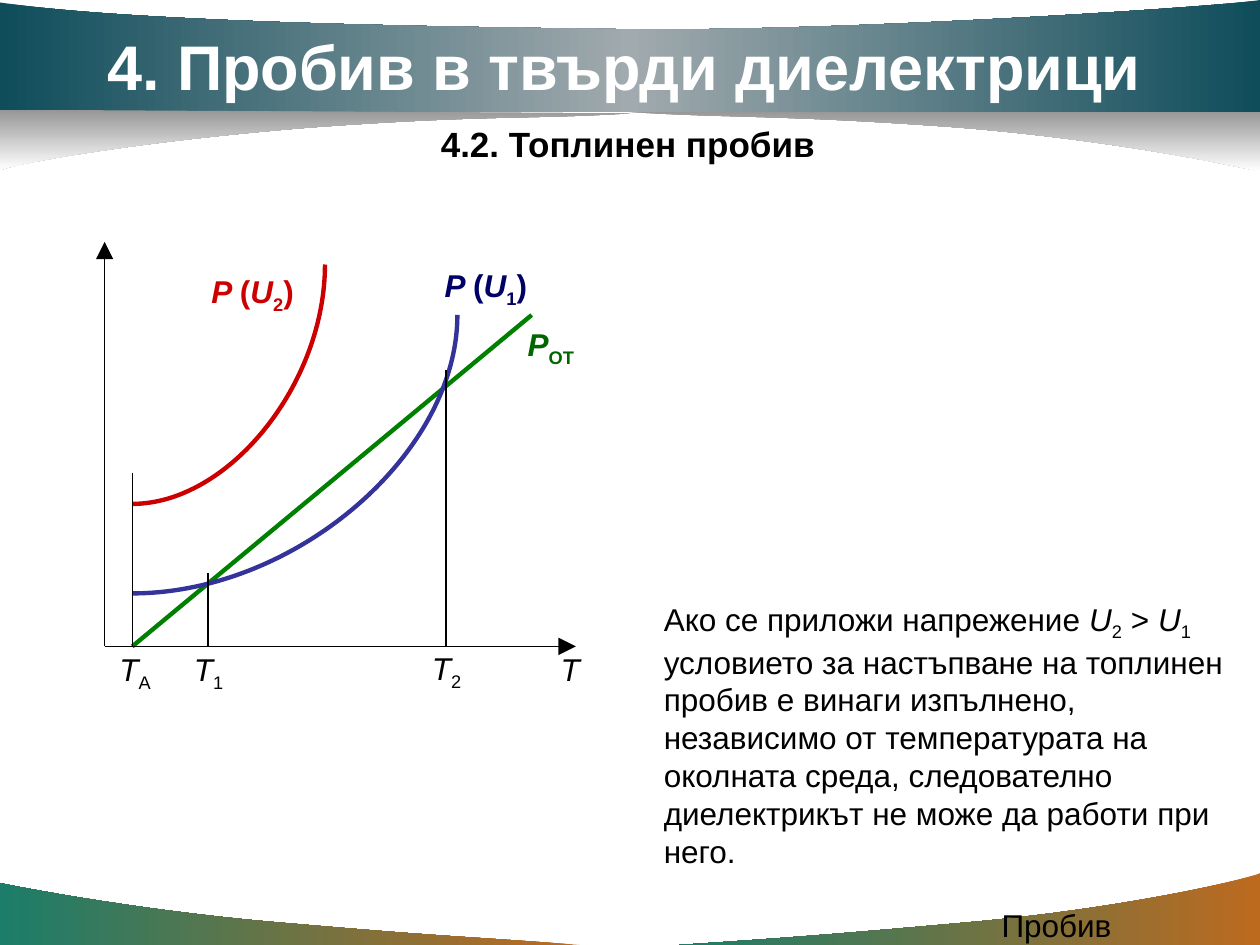
from dataclasses import dataclass

from lxml.etree import SubElement
from pptx import Presentation
from pptx.dml.color import RGBColor
from pptx.enum.shapes import MSO_CONNECTOR
from pptx.enum.text import MSO_ANCHOR, MSO_AUTO_SIZE, PP_ALIGN
from pptx.oxml.ns import qn
from pptx.util import Inches, Pt


@dataclass(frozen=True)
class Theme:
    font: str = "Arial"
    title_size: int = 36
    subtitle_size: int = 20
    text_size: int = 18
    thin: float = 0.75
    thick: float = 2.5
    black: str = "000000"
    white: str = "FFFFFF"
    green: str = "008000"
    dark_green: str = "006600"
    red: str = "CC0000"
    blue: str = "333399"
    dark_blue: str = "000066"
    floor_colors: tuple = ("BD6A1F", "1B7D6A")
    shade_colors: tuple = ("969696", "FFFFFF")
    header_colors: tuple = ("0F4D5B", "A1AAAE", "0F4D5B")


THEME = Theme()
LEFTWARD, DOWNWARD = 180, 90
UNITS_PER_INCH = 1000


@dataclass(frozen=True)
class Band:
    """A start point, then lines (x, y) and Bezier curves (x1, y1, x2, y2, x, y)."""
    colors: tuple
    angle: int
    start: tuple
    segments: tuple


@dataclass(frozen=True)
class Stroke:
    begin: tuple
    end: tuple
    color: str = THEME.black
    width: float = THEME.thin
    curved: bool = False
    arrow: bool = False


@dataclass(frozen=True)
class Label:
    """Spans are (text, style) pairs; style is "", "italic" or "sub"."""
    place: tuple
    spans: tuple
    color: str = THEME.black
    size: int = THEME.text_size
    bold: bool = False
    wrap: bool = False


def bend_segments(shape, segments: tuple) -> None:
    """Join each three line steps that stand for a curve into one Bezier step."""
    steps = iter(shape._element.findall(".//" + qn("a:lnTo")))
    for segment in segments:
        step = next(steps)
        if len(segment) == 6:
            curve = step.makeelement(qn("a:cubicBezTo"))
            step.addprevious(curve)
            for part in (step, next(steps), next(steps)):
                curve.append(part[0])
                part.getparent().remove(part)


def draw_band(page, band: Band) -> None:
    builder = page.shapes.build_freeform(*(value * UNITS_PER_INCH for value in band.start),
                                         scale=Inches(1) / UNITS_PER_INCH)
    points = [(segment[i] * UNITS_PER_INCH, segment[i + 1] * UNITS_PER_INCH)
              for segment in band.segments for i in range(0, len(segment), 2)]
    builder.add_line_segments(points, close=True)
    shape = builder.convert_to_shape()
    bend_segments(shape, band.segments)
    shape.shadow.inherit = False
    shape.line.fill.background()
    shape.fill.gradient()
    shape.fill.gradient_angle = 360 - band.angle
    stops = shape._element.spPr.find(".//" + qn("a:gsLst"))
    stops.clear()
    for index, color in enumerate(band.colors):
        position = 100000 * index // (len(band.colors) - 1)
        stop = SubElement(stops, qn("a:gs"), pos=str(position))
        SubElement(stop, qn("a:srgbClr"), val=color)


def draw_stroke(page, stroke: Stroke) -> None:
    kind = MSO_CONNECTOR.CURVE if stroke.curved else MSO_CONNECTOR.STRAIGHT
    ends = (Inches(value) for value in stroke.begin + stroke.end)
    connector = page.shapes.add_connector(kind, *ends)
    connector.line.color.rgb = RGBColor.from_string(stroke.color)
    connector.line.width = Pt(stroke.width)
    properties = connector._element.spPr
    if stroke.curved:  # a quarter turn, leaving horizontally
        properties.find(qn("a:prstGeom")).set("prst", "curvedConnector2")
    if stroke.arrow:
        SubElement(connector.line._get_or_add_ln(), qn("a:tailEnd"),
                   type="triangle", w="lg", len="lg")
    SubElement(properties, qn("a:effectLst"))


def fill_text(box, label: Label) -> None:
    box.left, box.top, box.width, box.height = (Inches(v) for v in label.place)
    frame = box.text_frame
    frame.auto_size = MSO_AUTO_SIZE.NONE
    frame.word_wrap = label.wrap
    frame.vertical_anchor = MSO_ANCHOR.TOP
    para = frame.paragraphs[0]
    para.alignment = PP_ALIGN.LEFT
    para.font.name = THEME.font
    para.font.size = Pt(label.size)
    para.font.bold = label.bold
    para.font.color.rgb = RGBColor.from_string(label.color)
    for text, style in label.spans:
        span = para.add_run()
        span.text = text
        if style == "italic":
            span.font.italic = True
        elif style == "sub":
            span.font._element.set("baseline", "-25000")


def draw_label(page, label: Label) -> None:
    fill_text(page.shapes.add_textbox(0, 0, 0, 0), label)


def power_spans(index: str) -> tuple:
    return (("P ", "italic"), ("(", ""), ("U", "italic"), (index, "sub"), (")", ""))


def temperature_spans(index: str) -> tuple:
    return ("T", "italic"), (index, "sub")


BANDS = (
    Band(THEME.floor_colors, LEFTWARD, (4.6, 7.5),
         ((3.84, 7.44, 3.58, 7.44, 2.32, 7.33), (1.06, 7.23, 0.01, 7.01, 0, 7.01), (0, 7.5))),
    Band(THEME.floor_colors, LEFTWARD, (5.39, 7.5),
         ((6.14, 7.45, 6.46, 7.43, 7.69, 7.32), (8.92, 7.21, 9.9, 6.98, 10, 6.93), (10, 7.5))),
    Band(THEME.shade_colors, DOWNWARD, (5, 0.89),
         ((5.84, 0.94, 6.2, 0.91, 7.58, 1.01), (8.97, 1.12, 9.98, 1.36, 10, 1.36), (10, 0.88))),
    Band(THEME.header_colors, LEFTWARD, (0, 0.89),
         ((10, 0.89), (10, 0), (9.64, 0.06, 6.53, 0.26, 4.87, 0.23),
          (3.21, 0.21, 1.01, 0.17, 0, 0.02))),
    Band(THEME.shade_colors, DOWNWARD, (5, 0.9),
         ((4.16, 0.95, 3.88, 0.91, 2.49, 1.01), (1.1, 1.12, 0.11, 1.3, 0, 1.35), (0, 0.87))),
)

# Diagram: shared axis positions
AXIS_X, AXIS_Y, AMBIENT_X = 0.83, 5.13, 1.05
STROKES = (
    Stroke((AMBIENT_X, AXIS_Y), (4.22, 2.5), THEME.green, THEME.thick),
    Stroke((AMBIENT_X, 4), (2.58, 2.1), THEME.red, THEME.thick, curved=True),
    Stroke((AXIS_X, AXIS_Y), (4.57, AXIS_Y), arrow=True),
    Stroke((AXIS_X, AXIS_Y), (AXIS_X, 1.92), arrow=True),
    Stroke((AMBIENT_X, 4.71), (3.63, 2.5), THEME.blue, THEME.thick, curved=True),
    *(Stroke((x, top), (x, AXIS_Y)) for x, top in ((AMBIENT_X, 3.75), (1.65, 4.55), (3.54, 2.94))),
)

TITLE = Label((0.75, 0.17, 8.44, 0.7), (("4. Пробив в твърди диелектрици", ""),),
              THEME.white, THEME.title_size, bold=True)
LABELS = (
    Label((7.85, 7.14, 2.08, 0.25), (("Пробив", ""),)),
    Label((3.4, 0.92, 3.18, 0.43), (("4.2. Топлинен пробив", ""),),
          size=THEME.subtitle_size, bold=True),
    Label((4.09, 2.53, 0.83, 0.4), (("P", "italic"), ("ОТ", "sub")), THEME.dark_green, bold=True),
    Label((1.58, 2.11, 1, 0.4), power_spans("2"), THEME.red, bold=True),
    Label((3.43, 2.06, 1, 0.4), power_spans("1"), THEME.dark_blue, bold=True),
    Label((4.35, 5.11, 0.35, 0.4), (("T", "italic"),)),
    Label((0.85, 5.11, 0.47, 0.4), temperature_spans("А")),
    Label((1.44, 5.11, 0.45, 0.4), temperature_spans("1")),
    Label((3.33, 5.1, 0.45, 0.4), temperature_spans("2")),
    Label((5.17, 4.71, 4.83, 2.2),
          (("Ако се приложи напрежение ", ""), ("U", "italic"), ("2", "sub"), (" > ", ""),
           ("U", "italic"), ("1", "sub"),
           (" условието за настъпване на топлинен пробив е винаги изпълнено, независимо от "
            "температурата на околната среда, следователно диелектрикът не може да работи "
            "при него.", "")), wrap=True),
)


def main() -> None:
    deck = Presentation()
    deck.slide_width, deck.slide_height = Inches(10), Inches(7.5)
    page = deck.slides.add_slide(deck.slide_layouts[5])
    # Background bands, with the title brought in front of them
    for band in BANDS:
        draw_band(page, band)
    title = page.shapes.title
    page.shapes._spTree.append(title._element)
    fill_text(title, TITLE)
    # Diagram and text
    for stroke in STROKES:
        draw_stroke(page, stroke)
    for label in LABELS:
        draw_label(page, label)
    deck.save("out.pptx")


if __name__ == "__main__":
    main()
